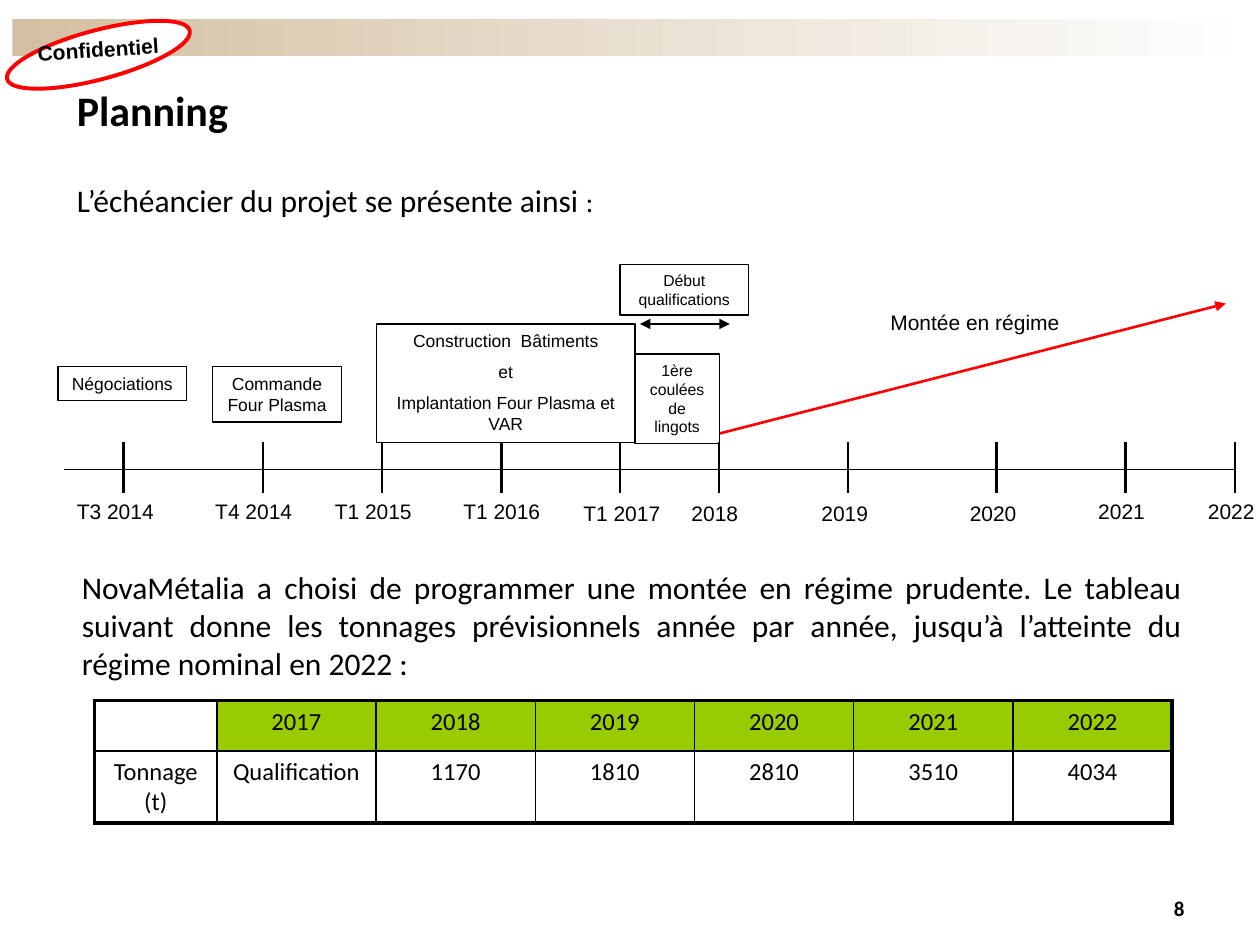
"""Planning slide: project timeline and yearly tonnage table."""
from dataclasses import dataclass

from lxml.etree import SubElement
from pptx import Presentation
from pptx.dml.color import RGBColor as RGB
from pptx.enum.shapes import MSO_CONNECTOR as CONN, MSO_SHAPE as SHAPE
from pptx.enum.text import MSO_ANCHOR as ANCHOR, PP_ALIGN as ALIGN
from pptx.oxml.ns import qn
from pptx.util import Cm, Pt


@dataclass(frozen=True)
class Theme:
    black: RGB = RGB(0, 0, 0)
    white: RGB = RGB(255, 255, 255)
    red: RGB = RGB(255, 0, 0)
    green: RGB = RGB(0x99, 0xCC, 0)
    sand: RGB = RGB(0xD3, 0xC0, 0xA3)
    heading_font: str = "Calibri"
    diagram_font: str = "Arial"
    title: float = 24
    body: float = 18
    colon: float = 16
    table: float = 14
    label: float = 12
    step: float = 10
    small: float = 9
    thin: float = 0.75
    cell: float = 1
    tick: float = 1.25
    ramp: float = 1.5
    thick: float = 2.25


def write_text(tf, text, size, font, color, bold=False, align=ALIGN.LEFT,
               anchor=ANCHOR.TOP, wrap=True, gap=0):
    tf.word_wrap = wrap
    tf.vertical_anchor = anchor
    for i, line in enumerate(text.split("\n")):
        p = tf.add_paragraph() if i else tf.paragraphs[0]
        p.alignment = align
        if i:
            p.space_before = Pt(gap)
        r = p.add_run()
        r.text = line
        f = r.font
        f.size, f.name, f.bold = Pt(size), font, bold
        f.color.rgb = color


class SlideBuilder:
    def __init__(self, slide, theme):
        self.s = slide
        self.t = theme

    def shape(self, kind, box, fill=None, line=None, width=0.75, rotation=0):
        sp = self.s.shapes.add_shape(kind, *map(Cm, box))
        sp.shadow.inherit = False
        sp.rotation = rotation
        if fill is None:
            sp.fill.background()
        else:
            sp.fill.solid()
            sp.fill.fore_color.rgb = fill
        if line is None:
            sp.line.fill.background()
        else:
            sp.line.color.rgb = line
            sp.line.width = Pt(width)
        return sp

    def banner(self, box):
        sp = self.shape(SHAPE.RECTANGLE, box)
        sp.fill.gradient()
        sp.fill.gradient_angle = 0
        for stop, color, pos in zip(sp.fill.gradient_stops,
                                    (self.t.sand, self.t.white), (0, 1)):
            stop.color.rgb = color
            stop.position = pos

    def text(self, box, text, size, font=None, rotation=0, **fmt):
        sp = self.s.shapes.add_textbox(*map(Cm, box))
        sp.rotation = rotation
        write_text(sp.text_frame, text, size, font or self.t.heading_font,
                   self.t.black, **fmt)
        return sp

    def step(self, box, text, size, fill=None):
        sp = self.shape(SHAPE.RECTANGLE, box, fill, self.t.black, self.t.thin)
        write_text(sp.text_frame, text, size, self.t.diagram_font,
                   self.t.black, align=ALIGN.CENTER, gap=5.7)

    def date(self, box, text):
        sp = self.shape(SHAPE.RECTANGLE, box, self.t.white)
        write_text(sp.text_frame, text, self.t.label, self.t.diagram_font,
                   self.t.black)
        return sp

    def line(self, start, end, color, width, arrows=()):
        cx = self.s.shapes.add_connector(CONN.STRAIGHT, *map(Cm, start + end))
        cx.line.color.rgb = color
        cx.line.width = Pt(width)
        ln = cx.line._get_or_add_ln()
        for tag in arrows:
            SubElement(ln, qn(f"a:{tag}"), type="triangle")
        SubElement(ln.getparent(), qn("a:effectLst"))
        return cx

    def table(self, left, top, widths, heights, rows):
        t = self.t
        frame = self.s.shapes.add_table(
            len(rows), len(widths), Cm(left), Cm(top),
            Cm(sum(widths)), Cm(sum(heights)))
        tbl = frame.table
        tbl.first_row = tbl.horz_banding = False
        for col, width in zip(tbl.columns, widths):
            col.width = Cm(width)
        for row, height in zip(tbl.rows, heights):
            row.height = Cm(height)
        for i, values in enumerate(rows):
            for j, value in enumerate(values):
                cell = tbl.cell(i, j)
                outer = {"L": j == 0, "R": j == len(widths) - 1,
                         "T": i == 0, "B": i == len(rows) - 1}
                self.borders(cell, outer)
                if i == 0 and value:
                    cell.fill.solid()
                    cell.fill.fore_color.rgb = t.green
                else:
                    cell.fill.background()
                if value:
                    write_text(cell.text_frame, value, t.table,
                               t.heading_font, t.black, align=ALIGN.CENTER)

    def borders(self, cell, outer):
        tc_pr = cell._tc.get_or_add_tcPr()
        for side, is_outer in outer.items():
            width = Pt(self.t.thick if is_outer else self.t.cell)
            ln = SubElement(tc_pr, qn(f"a:ln{side}"), w=str(width))
            SubElement(SubElement(ln, qn("a:solidFill")), qn("a:srgbClr"),
                       val=str(self.t.black))


def add_timeline(b):
    t = b.t
    high, low = 9.93, 9.96
    dates = [("T3 2014", 1.3, 2.21, high, 2.49), ("T4 2014", 4.09, 2.79, high, 5.31),
             ("T1 2015", 6.5, 2.21, high, 7.7), ("T1 2016", 9.09, 2.21, high, 10.11),
             ("T1 2017", 11.51, 2.59, low, 12.5), ("2018", 13.69, 2.21, low, 14.5),
             ("2019", 16.31, 2.21, low, 17.09), ("2020", 19.3, 2.21, low, 20.09),
             ("2021", 21.89, 1.6, high, 22.71), ("2022", 24.1, 1.6, high, 24.89)]
    for text, left, width, top, x in dates:
        sp = b.date((left, top, width, 0.76), text)
        tick = b.line((x, high), (x, 8.92), t.black, t.tick)
        if abs(left + width / 2 - x) < 0.05:
            tick.begin_connect(sp, 0)
            tick.end_x = tick.begin_x
    b.line((1.3, 9.47), (24.89, 9.47), t.black, t.thin)
    b.line((14.5, 8.74), (24.71, 6.12), t.red, t.ramp, ("tailEnd",))
    b.line((12.9, 6.53), (14.71, 6.53), t.black, t.thin, ("headEnd", "tailEnd"))
    b.step((1.17, 7.39, 2.59, 0.69), "Négociations", t.step)
    b.step((4.29, 7.39, 2.59, 1.12), "Commande Four Plasma", t.step, t.white)
    b.step((7.59, 6.53, 5.21, 2.39),
           "Construction  Bâtiments\net\nImplantation Four Plasma et VAR", t.step)
    b.step((12.8, 7.14, 1.7, 1.8), "1ère coulées de lingots", t.small)
    b.step((12.5, 5.33, 2.59, 1.02), "Début qualifications", t.small)
    b.text((17.7, 6.12, 4.19, 0.76), "Montée en régime", t.label, t.diagram_font)


def main():
    prs = Presentation()
    prs.slide_width, prs.slide_height = Cm(25.4), Cm(19.05)
    t = Theme()
    b = SlideBuilder(prs.slides.add_slide(prs.slide_layouts[6]), t)
    b.banner((0.25, 0.38, 25.1, 0.76))
    b.shape(SHAPE.OVAL, (0.08, 0.61, 3.81, 0.99), t.white, t.red, t.thick, 345.1)
    b.text((0.46, 0.61, 3.05, 0.94), "Confidentiel", t.label, t.diagram_font,
           rotation=356.3, bold=True, align=ALIGN.CENTER, wrap=False)
    b.text((1.3, 1.32, 22.86, 1.8), "Planning", t.title, bold=True,
           anchor=ANCHOR.MIDDLE)
    intro = b.text((1.3, 3.53, 22.86, 1.04),
                   "L’échéancier du projet se présente ainsi ", t.body)
    r = intro.text_frame.paragraphs[0].add_run()
    r.text = ":"
    r.font.size, r.font.name = Pt(t.colon), t.heading_font
    r.font.color.rgb = t.black
    add_timeline(b)
    b.text((1.4, 11.33, 22.68, 2.21),
           "NovaMétalia a choisi de programmer une montée en régime prudente. "
           "Le tableau suivant donne les tonnages prévisionnels année par année, "
           "jusqu’à l’atteinte du régime nominal en 2022 :",
           t.body, align=ALIGN.JUSTIFY)
    b.table(1.91, 14.12, [2.46] + [3.21] * 6, [0.84, 1.45],
            [["", "2017", "2018", "2019", "2020", "2021", "2022"],
             ["Tonnage (t)", "Qualification", "1170", "1810", "2810", "3510", "4034"]])
    b.text((22.5, 17.93, 1.63, 0.74), "8", t.label, bold=True, align=ALIGN.RIGHT)
    prs.save("out.pptx")


if __name__ == "__main__":
    main()
